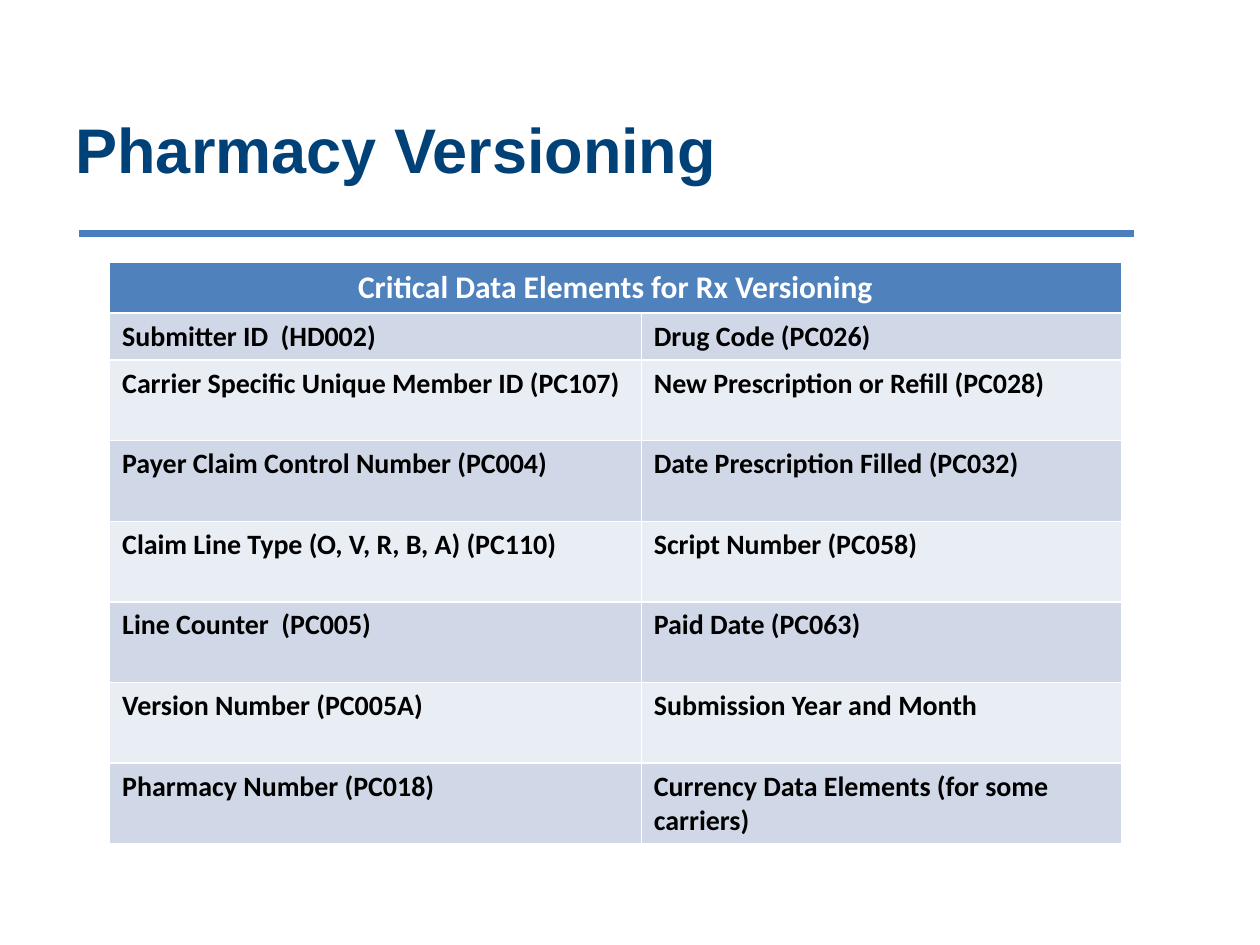
"""Build the Pharmacy Versioning slide with its table of critical data elements."""
from lxml import etree
from pptx import Presentation
from pptx.dml.color import RGBColor
from pptx.enum import shapes, text
from pptx.oxml.ns import qn
from pptx.util import Inches, Pt


def rgb(value):
    return RGBColor.from_string(value)


def style(p, font, size, color, align):
    p.alignment = align
    for r in p.runs:
        r.font.name = font
        r.font.size = Pt(size)
        r.font.bold = True
        r.font.color.rgb = rgb(color)


prs = Presentation()
prs.slide_width, prs.slide_height = Inches(10), Inches(7.5)
s = prs.slides.add_slide(prs.slide_layouts[5])

rule = s.shapes.add_connector(shapes.MSO_CONNECTOR.STRAIGHT, Inches(0.63), Inches(1.85), Inches(9), Inches(1.85))
rule.line.color.rgb = rgb("4B7EBC")
rule.line.width = Pt(4)
etree.SubElement(rule._element.spPr, qn("a:effectLst"))

title = s.shapes.title
title.left, title.top, title.width, title.height = Inches(0.5), Inches(0.62), Inches(8.5), Inches(1.11)
tf = title.text_frame
tf.text = "Pharmacy Versioning"
tf.vertical_anchor = text.MSO_ANCHOR.MIDDLE
style(tf.paragraphs[0], "Arial", 36, "004178", text.PP_ALIGN.LEFT)

elements = [
    ("Submitter ID  (HD002)", "Drug Code (PC026)"),
    ("Carrier Specific Unique Member ID (PC107)", "New Prescription or Refill (PC028)"),
    ("Payer Claim Control Number (PC004)", "Date Prescription Filled (PC032)"),
    ("Claim Line Type (O, V, R, B, A) (PC110)", "Script Number (PC058)"),
    ("Line Counter  (PC005)", "Paid Date (PC063)"),
    ("Version Number (PC005A)", "Submission Year and Month"),
    ("Pharmacy Number (PC018)", "Currency Data Elements (for some carriers)"),
]
heights = [0.4, 0.37] + [0.64] * 6
table = s.shapes.add_table(len(heights), 2, Inches(0.87), Inches(2.08), Inches(8.03), Inches(sum(heights))).table
for column, width in zip(table.columns, (4.22, 3.81)):
    column.width = Inches(width)
for row, height in zip(table.rows, heights):
    row.height = Inches(height)

header = table.cell(0, 0)
header.merge(table.cell(0, 1))
header.text_frame.text = "Critical Data Elements for Rx Versioning"
header.fill.solid()
header.fill.fore_color.rgb = rgb("4F81BD")
style(header.text_frame.paragraphs[0], "Calibri", 18, "FFFFFF", text.PP_ALIGN.CENTER)

for i, pair in enumerate(elements, 1):
    for j, label in enumerate(pair):
        cell = table.cell(i, j)
        cell.text_frame.text = label
        cell.fill.solid()
        cell.fill.fore_color.rgb = rgb("D0D8E8" if i % 2 else "E9EDF4")
        style(cell.text_frame.paragraphs[0], "Calibri", 16, "000000", text.PP_ALIGN.LEFT)

prs.save("out.pptx")
